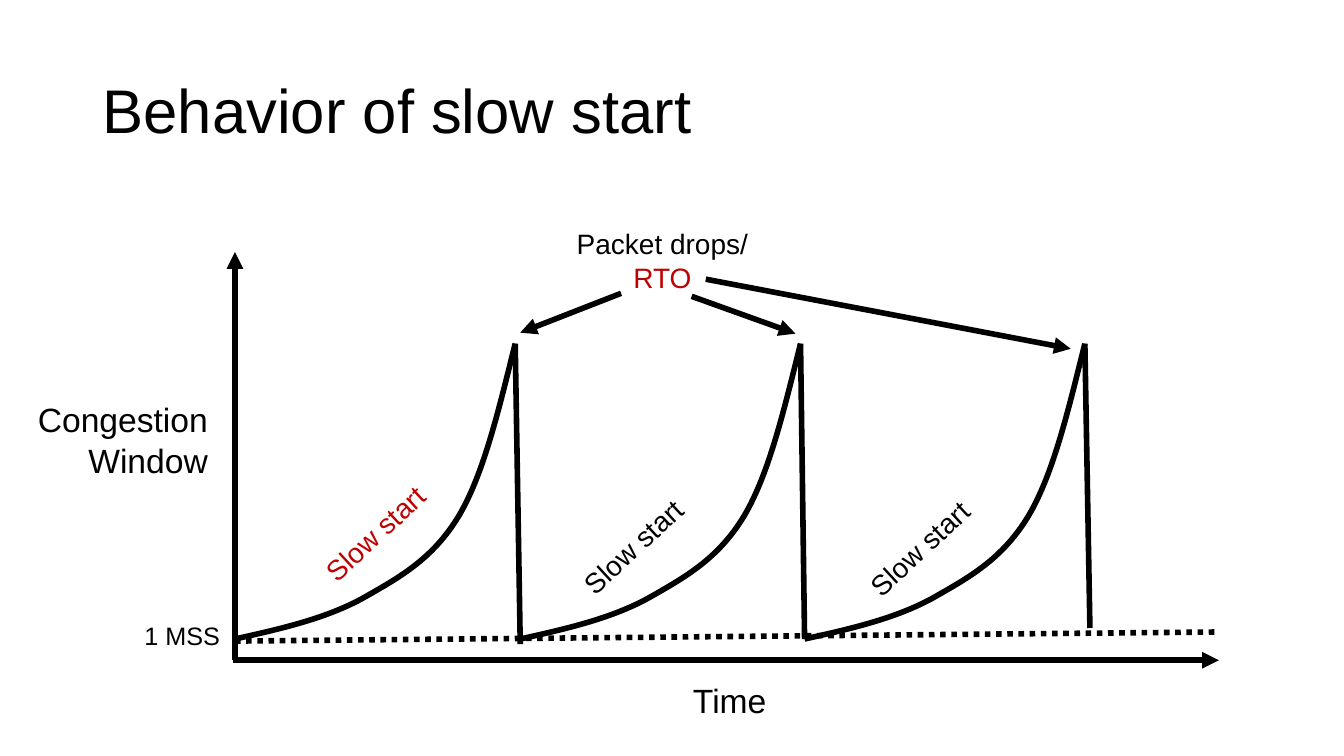
from lxml import etree
from pptx import Presentation
from pptx import util as u
from pptx.dml.color import RGBColor
from pptx.enum import dml, shapes, text
from pptx.oxml.ns import qn

BLACK, RED = "000000", "C00000"
BASE, PEAK = 6.34, 3.41
# Control points of one slow start, three per cubic segment, relative to its starting point
GROWTH = [
    (0.45, -0.1), (0.89, -0.2), (1.26, -0.4),
    (1.63, -0.61), (1.96, -0.79), (2.22, -1.22),
    (2.47, -1.64), (2.62, -2.29), (2.78, PEAK - BASE),
]


def color(value):
    return RGBColor.from_string(value)


class Diagram:
    font = "Arial"
    stroke = 4

    def __init__(self, page):
        self.page = page

    def style_line(self, line):
        line.color.rgb = color(BLACK)
        line.width = u.Pt(self.stroke)

    def line(self, start, end, arrow=False, dash=None):
        connector = self.page.shapes.add_connector(
            shapes.MSO_CONNECTOR.STRAIGHT, *map(u.Inches, (*start, *end)))
        self.style_line(connector.line)
        if dash:
            connector.line.dash_style = dash
        properties = connector._element.spPr
        if arrow:
            outline = properties.find(qn("a:ln"))
            etree.SubElement(outline, qn("a:tailEnd"), type="triangle")
        etree.SubElement(properties, qn("a:effectLst"))

    def curve(self, left, base, controls):
        """Draw an open outline of cubic segments, three control points each."""
        points = [(u.Inches(left + x), u.Inches(base + y)) for x, y in controls]
        builder = self.page.shapes.build_freeform(u.Inches(left), u.Inches(base))
        builder.add_line_segments(points, close=False)
        shape = builder.convert_to_shape()
        outline = shape._element.spPr.find(".//" + qn("a:path"))
        steps = outline.findall(qn("a:lnTo"))
        for first in range(0, len(steps), 3):
            cubic = etree.SubElement(outline, qn("a:cubicBezTo"))
            for step in steps[first:first + 3]:
                cubic.append(step[0])
                outline.remove(step)
        shape.shadow.inherit = False
        shape.fill.background()
        self.style_line(shape.line)

    def label(self, place, lines, size, align="LEFT", rotation=0, **frame_format):
        """Write one paragraph for each (wording, colour) pair."""
        box = self.page.shapes.add_textbox(*map(u.Inches, place))
        box.rotation = rotation
        frame = box.text_frame
        defaults = {"word_wrap": True, "auto_size": text.MSO_AUTO_SIZE.SHAPE_TO_FIT_TEXT}
        for name, value in {**defaults, **frame_format}.items():
            setattr(frame, name, value)
        for index, (wording, shade) in enumerate(lines):
            para = frame.add_paragraph() if index else frame.paragraphs[0]
            para.alignment = text.PP_ALIGN[align]
            span = para.add_run()
            span.text = wording
            span.font.color.rgb = color(shade)
            for name, value in {"name": self.font, "size": u.Pt(size)}.items():
                setattr(span.font, name, value)
        return frame


def main():
    deck = Presentation()
    deck.slide_width, deck.slide_height = u.Inches(13.33), u.Inches(7.5)
    diagram = Diagram(deck.slides.add_slide(deck.slide_layouts[6]))

    title = diagram.label((0.92, 0.4, 11.5, 1.45), [("Behavior of slow start", BLACK)], 44,
                          auto_size=text.MSO_AUTO_SIZE.NONE,
                          vertical_anchor=text.MSO_ANCHOR.MIDDLE)
    title.paragraphs[0].line_spacing = 0.9

    # Axes
    diagram.line((2.33, 6.55), (2.33, 2.5), arrow=True)
    diagram.line((2.31, 6.55), (12.09, 6.55), arrow=True)

    # Growth up to each drop, then the fall
    for start, fall_to in ((2.33, (5.16, 6.39)), (5.16, (7.98, 6.34)), (7.98, (10.81, 6.23))):
        diagram.curve(start, BASE, GROWTH)
        diagram.line((start + GROWTH[-1][0], PEAK), fall_to)
    diagram.line((2.33, 6.36), (12.09, 6.27), dash=dml.MSO_LINE.ROUND_DOT)

    # Axis labels
    for place, wording, size in (
        ((1.04, 6.11, 1.24, 0.4), "1 MSS", 18),
        ((0.1, 3.91, 2.06, 0.91), "Congestion Window", 24),
        ((5.64, 6.7, 2.06, 0.5), "Time", 24),
    ):
        diagram.label(place, [(wording, BLACK)], size, align="RIGHT")

    # Packet drops and their arrows
    diagram.label((5.61, 2.2, 1.92, 0.77), [("Packet drops/", BLACK), ("RTO", RED)], 20,
                  align="CENTER")
    for start, end in (((6.16, 2.91), (5.16, 3.3)), ((6.86, 2.94), (7.89, 3.31)),
                       ((7, 2.77), (10.62, 3.46))):
        diagram.line(start, end, arrow=True)

    for left, top, shade in ((2.97, 4.97, RED), (5.53, 5.1, BLACK), (8.37, 5.12, BLACK)):
        diagram.label((left, top, 1.72, 0.44), [("Slow start", shade)], 20, rotation=317.3)

    deck.save("out.pptx")


if __name__ == "__main__":
    main()
